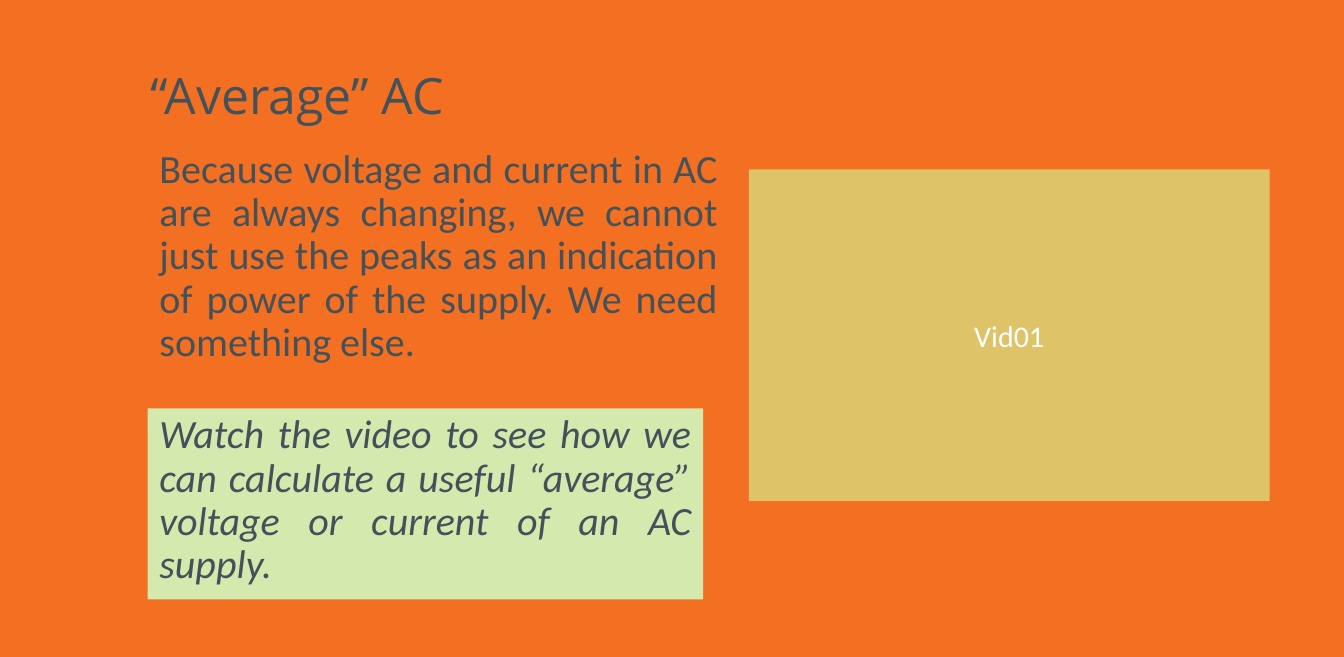
import pptx
import pptx.util
import pptx.dml.color
import pptx.enum.shapes
import pptx.enum.text

COLORS = {
    "background": "F36F21",
    "text": "43525A",
    "task": "D3E9AD",
    "video": "DEC368",
    "label": "FFFFFF",
}
SLIDE_WIDTH = pptx.util.Inches(11.2)
SLIDE_HEIGHT = pptx.util.Pt(394)
COLUMNS = 112
ROWS = 54.7
ALIGN = pptx.enum.text.PP_ALIGN
ANCHOR = pptx.enum.text.MSO_ANCHOR


def grid_box(column, row, width, height):
    return (
        round(SLIDE_WIDTH * column / COLUMNS),
        round(SLIDE_HEIGHT * row / ROWS),
        round(SLIDE_WIDTH * width / COLUMNS),
        round(SLIDE_HEIGHT * height / ROWS),
    )


def set_fill(fill, color):
    fill.solid()
    fill.fore_color.rgb = pptx.dml.color.RGBColor.from_string(COLORS[color])


def write_text(shape, text, size=24, font="Calibri", color="text", italic=False,
               align=ALIGN.JUSTIFY, anchor=ANCHOR.TOP, line_spacing=0.9, space_before=7.3):
    frame = shape.text_frame
    frame.word_wrap = True
    frame.auto_size = pptx.enum.text.MSO_AUTO_SIZE.NONE
    frame.vertical_anchor = anchor
    paragraph = frame.paragraphs[0]
    paragraph.alignment = align
    paragraph.line_spacing = line_spacing
    paragraph.space_before = pptx.util.Pt(space_before)
    run = paragraph.add_run()
    run.text = text
    run.font.size = pptx.util.Pt(size)
    run.font.name = font
    run.font.italic = italic
    run.font.color.rgb = pptx.dml.color.RGBColor.from_string(COLORS[color])


def add_panel(slide, box, color):
    shape = slide.shapes.add_shape(pptx.enum.shapes.MSO_SHAPE.RECTANGLE, *box)
    shape.shadow.inherit = False
    shape.line.fill.background()
    set_fill(shape.fill, color)
    return shape


def place_title(slide, box):
    title = slide.shapes.title
    title.left, title.top, title.width, title.height = box
    write_text(title, "“Average” AC", size=30, font="Open Sans",
               align=ALIGN.LEFT, anchor=ANCHOR.MIDDLE, space_before=0)


def add_explanation(slide, box):
    write_text(
        slide.shapes.add_textbox(*box),
        "Because voltage and current in AC are always changing, we cannot just use "
        "the peaks as an indication of power of the supply. We need something else.",
    )


def add_task(slide, box):
    write_text(
        add_panel(slide, box, "task"),
        "Watch the video to see how we can calculate a useful “average” "
        "voltage or current of an AC supply.",
        italic=True,
    )


def add_video_area(slide, box):
    write_text(add_panel(slide, box, "video"), "Vid01", size=18, color="label",
               align=ALIGN.CENTER, anchor=ANCHOR.MIDDLE, line_spacing=1, space_before=0)


def build_slide(presentation):
    slide = presentation.slides.add_slide(presentation.slide_layouts[5])
    set_fill(slide.background.fill, "background")
    place_title(slide, grid_box(11.55, 2.9, 83.9, 10.6))
    add_explanation(slide, grid_box(12.3, 11.9, 48.5, 20.4))
    add_task(slide, grid_box(12.3, 34, 46.3, 15.9))
    add_video_area(slide, grid_box(62.4, 14.1, 43.4, 27.6))


def main():
    presentation = pptx.Presentation()
    presentation.slide_width = SLIDE_WIDTH
    presentation.slide_height = SLIDE_HEIGHT
    build_slide(presentation)
    presentation.save("out.pptx")


if __name__ == "__main__":
    main()
